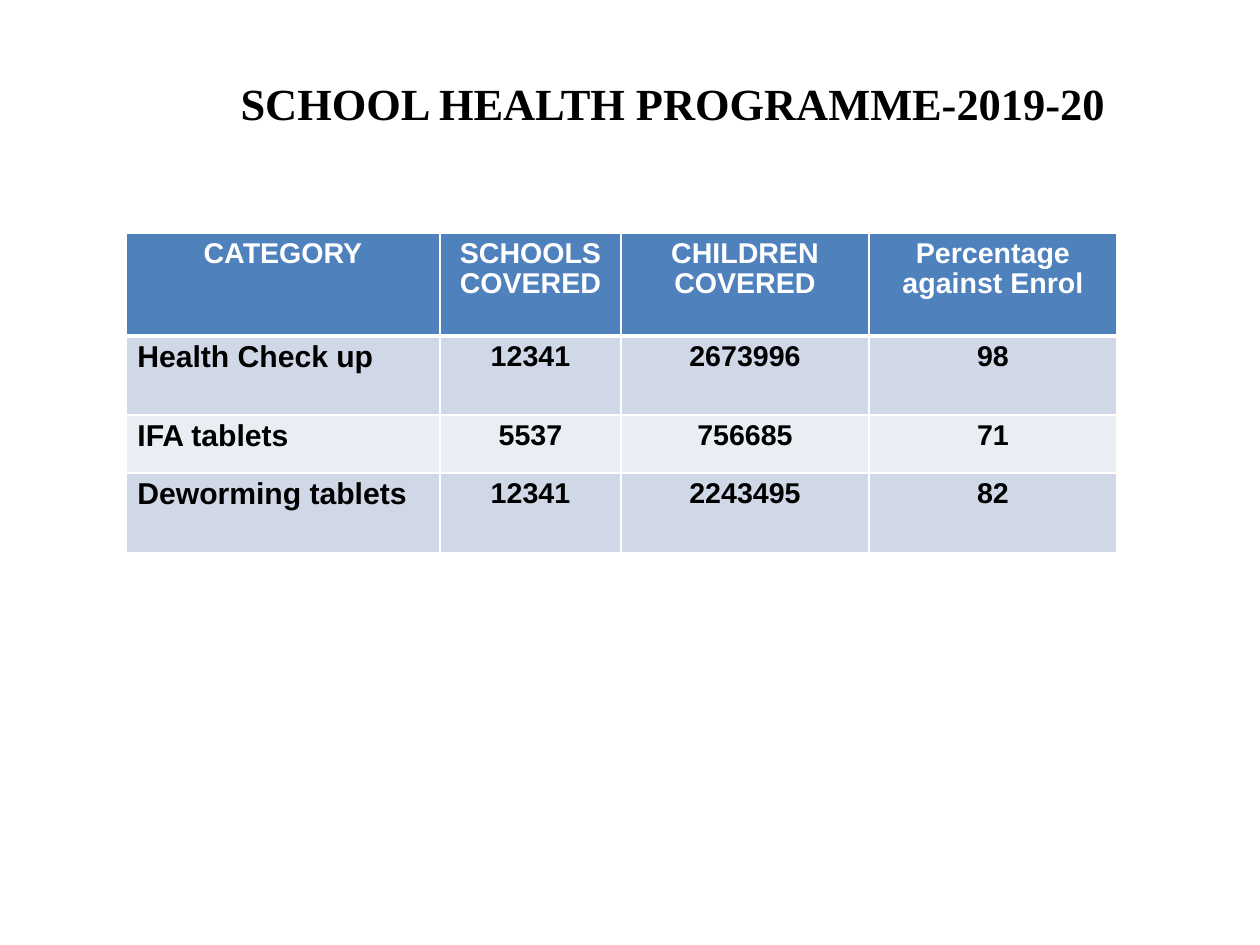
from lxml.etree import SubElement
from pptx import Presentation
from pptx.dml.color import RGBColor
from pptx.enum.text import MSO_ANCHOR, PP_ALIGN
from pptx.oxml.ns import qn
from pptx.util import Pt

PX = 8000  # EMU per px
COLORS = {
    "black": "000000",
    "white": "FFFFFF",
    "header": "4F81BD",
    "band_dark": "D0D8E8",
    "band_light": "E9EDF4",
}
COLUMN_WIDTHS = [314, 181, 248, 248]
ROW_HEIGHTS = [103, 79, 58, 80]
ROWS = [
    ["CATEGORY", "SCHOOLS COVERED", "CHILDREN COVERED", "Percentage against Enrol"],
    ["Health Check up", "12341", "2673996", "98"],
    ["IFA tablets", "5537", "756685", "71"],
    ["Deworming tablets", "12341", "2243495", "82"],
]


def rgb(name):
    return RGBColor.from_string(COLORS[name])


class SlideBuilder:
    def __init__(self, prs):
        self.s = prs.slides.add_slide(prs.slide_layouts[6])

    def style(self, p, font, size, color, align):
        p.alignment = align
        p.font.name = font
        p.font.size = Pt(size)
        p.font.bold = True
        p.font.color.rgb = rgb(color)

    def title(self, text, x, y, w, h, bottom):
        sp = self.s.shapes.add_textbox(x * PX, y * PX, w * PX, h * PX)
        tf = sp.text_frame
        tf.word_wrap = True
        tf.vertical_anchor = MSO_ANCHOR.BOTTOM
        tf.margin_bottom = bottom * PX
        p = tf.paragraphs[0]
        p.text = text
        self.style(p, "Times New Roman", 28, "black", PP_ALIGN.CENTER)

    def borders(self, cell, top, bottom):
        """Draw white cell borders; top and bottom are widths in points."""
        tc_pr = cell._tc.get_or_add_tcPr()
        for side, width in zip("LRTB", (1, 1, top, bottom)):
            ln = SubElement(tc_pr, qn(f"a:ln{side}"), w=str(Pt(width)))
            fill = SubElement(ln, qn("a:solidFill"))
            SubElement(fill, qn("a:srgbClr"), val=COLORS["white"])

    def cell(self, cell, text, row, col):
        header, label = row == 0, row > 0 and col == 0
        self.borders(cell, 3 if row == 1 else 1, 3 if header else 1)
        cell.fill.solid()
        band = "band_dark" if row % 2 else "band_light"
        cell.fill.fore_color.rgb = rgb("header" if header else band)
        cell.margin_top = 7 * PX
        p = cell.text_frame.paragraphs[0]
        p.text = text
        p.line_spacing = 0.93
        self.style(p, "Arial", 19 if label else 18, "white" if header else "black",
                   PP_ALIGN.LEFT if label else PP_ALIGN.CENTER)

    def table(self, rows, x, y, widths, heights):
        frame = self.s.shapes.add_table(len(rows), len(widths), x * PX, y * PX,
                                        sum(widths) * PX, sum(heights) * PX)
        table = frame.table
        for column, w in zip(table.columns, widths):
            column.width = w * PX
        for i, (row, h) in enumerate(zip(rows, heights)):
            table.rows[i].height = h * PX
            for j, text in enumerate(row):
                self.cell(table.cell(i, j), text, i, j)


def main():
    prs = Presentation()
    prs.slide_width = 1260 * PX
    prs.slide_height = 945 * PX
    slide = SlideBuilder(prs)
    slide.title("SCHOOL HEALTH PROGRAMME-2019-20", 115, 0, 1115, 149, 20)
    slide.table(ROWS, 126, 233, COLUMN_WIDTHS, ROW_HEIGHTS)
    prs.save("out.pptx")


if __name__ == "__main__":
    main()
